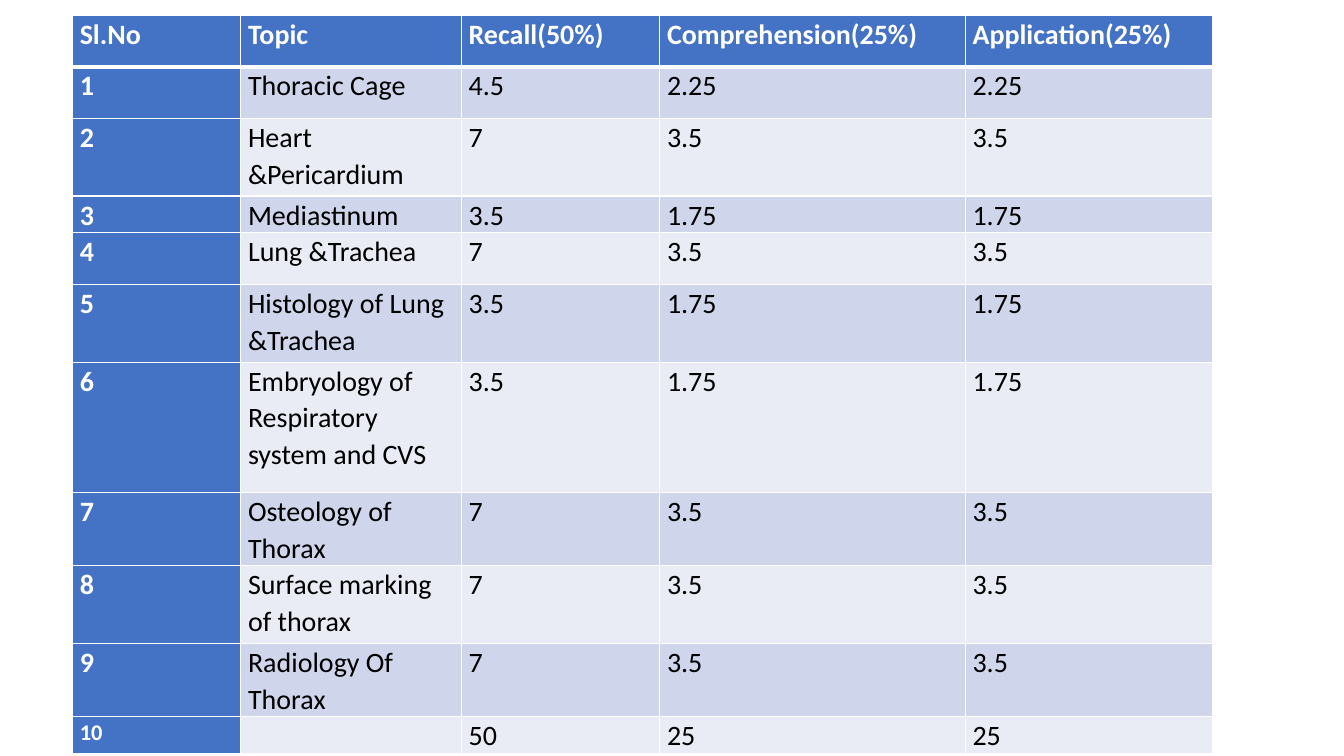
from dataclasses import dataclass

from lxml import etree
from pptx import Presentation
from pptx.dml.color import RGBColor
from pptx.oxml import ns
from pptx.util import Cm, Pt

WHITE = RGBColor(0xFF, 0xFF, 0xFF)
BLACK = RGBColor(0x00, 0x00, 0x00)
BLUE = RGBColor(0x44, 0x72, 0xC4)
BAND_DARK = RGBColor(0xCF, 0xD5, 0xEA)
BAND_LIGHT = RGBColor(0xE9, 0xEB, 0xF5)

COLUMN_WIDTHS = (4.24, 5.56, 5.0, 7.7, 6.22)


@dataclass
class Row:
    height: float
    texts: tuple[str, ...]
    number_size: int = 20


ROWS = [
    Row(1.3, ("Sl.No", "Topic", "Recall(50%)", "Comprehension(25%)", "Application(25%)")),
    Row(1.3, ("1", "Thoracic Cage", "4.5", "2.25", "2.25")),
    Row(1.96, ("2", "Heart &Pericardium", "7", "3.5", "3.5")),
    Row(0.64, ("3", "Mediastinum", "3.5", "1.75", "1.75")),
    Row(1.3, ("4", "Lung &Trachea", "7", "3.5", "3.5")),
    Row(1.96, ("5", "Histology of Lung &Trachea", "3.5", "1.75", "1.75")),
    Row(3.28, ("6", "Embryology of Respiratory system and CVS", "3.5", "1.75", "1.75")),
    Row(1.3, ("7", "Osteology of Thorax", "7", "3.5", "3.5")),
    Row(1.96, ("8", "Surface marking of thorax", "7", "3.5", "3.5")),
    Row(1.3, ("9", "Radiology Of Thorax", "7", "3.5", "3.5")),
    Row(0.64, ("10", "", "50", "25", "25"), number_size=16),
]


def write(cell, text: str, *, size: int = 20, bold: bool = False,
          color: RGBColor = BLACK) -> None:
    cell.margin_left = cell.margin_right = Cm(0.18)
    cell.margin_top = cell.margin_bottom = 0
    if not text:
        return
    p = cell.text_frame.paragraphs[0]
    p.line_spacing = 1.07
    p.space_after = Pt(8)
    r = p.add_run()
    r.text = text
    r.font.name = "Calibri"
    r.font.size = Pt(size)
    r.font.bold = bold
    r.font.color.rgb = color


def add_borders(cell, top: float = 1, bottom: float = 1) -> None:
    """Draw white borders; call before the cell is filled."""
    props = cell._tc.get_or_add_tcPr()
    for side, width in (("L", 1), ("R", 1), ("T", top), ("B", bottom)):
        line = etree.SubElement(props, ns.qn(f"a:ln{side}"), w=str(Pt(width)))
        fill = etree.SubElement(line, ns.qn("a:solidFill"))
        etree.SubElement(fill, ns.qn("a:srgbClr"), val=str(WHITE))


def add_marks_table(s) -> None:
    table = s.shapes.add_table(len(ROWS), len(COLUMN_WIDTHS), Cm(1.83), Cm(0.38),
                               Cm(sum(COLUMN_WIDTHS)),
                               Cm(sum(row.height for row in ROWS))).table
    table.first_col = True
    for column, width in zip(table.columns, COLUMN_WIDTHS):
        column.width = Cm(width)
    for i, row in enumerate(ROWS):
        table.rows[i].height = Cm(row.height)
        band = BAND_DARK if i % 2 else BAND_LIGHT
        for j, value in enumerate(row.texts):
            cell = table.cell(i, j)
            heading = i == 0 or j == 0
            write(cell, value, size=row.number_size if j == 0 else 20,
                  bold=heading, color=WHITE if heading else BLACK)
            add_borders(cell, top=3 if i == 1 else 1, bottom=3 if i == 0 else 1)
            cell.fill.solid()
            cell.fill.fore_color.rgb = BLUE if heading else band


def main() -> None:
    prs = Presentation()
    prs.slide_width, prs.slide_height = Cm(33.87), Cm(19.05)
    s = prs.slides.add_slide(prs.slide_layouts[6])
    add_marks_table(s)
    prs.save("out.pptx")


if __name__ == "__main__":
    main()
